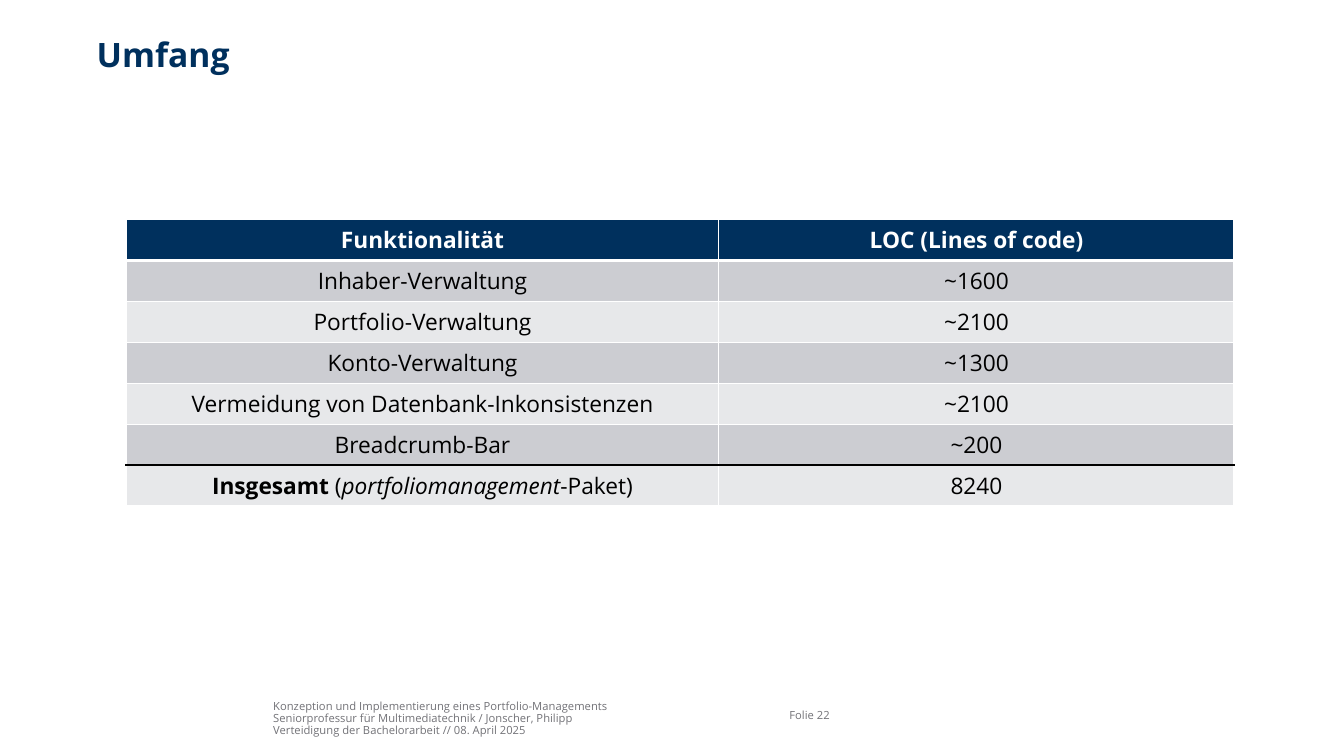
"""Builds the slide "Umfang": a table of code size by feature, with title and footer."""
from lxml.etree import SubElement as Sub
from pptx import Presentation
from pptx.dml.color import RGBColor
from pptx.enum.text import MSO_ANCHOR as Anchor, PP_ALIGN as Align
from pptx.oxml.ns import qn
from pptx.util import Inches, Pt

NAVY, WHITE, BLACK, GRAY = "00305D", "FFFFFF", "000000", "727277"
BANDS = ["CCCDD2", "E7E8EA"]


def color(code):
    return RGBColor.from_string(code)


def write(frame, text, size=16.2, ink=BLACK, bold=False, align=Align.LEFT, space=1.0):
    """Fill a frame; text is a string with line ends, or a list of (text, bold, italic)."""
    lines = [[(line, bold, False)] for line in text.split("\n")] if isinstance(text, str) else [text]
    for i, line in enumerate(lines):
        para = frame.paragraphs[0] if i == 0 else frame.add_paragraph()
        para.alignment, para.line_spacing = align, space
        for words, heavy, slant in line:
            run = para.add_run()
            run.text = words
            font = run.font
            font.name, font.size = "Open Sans", Pt(size)
            font.bold, font.italic = heavy, slant
            font.color.rgb = color(ink)


deck = Presentation()
deck.slide_width, deck.slide_height = Inches(13.33), Inches(7.5)
slide = deck.slides.add_slide(deck.slide_layouts[6])

foot = """Konzeption und Implementierung eines Portfolio-Managements
Seniorprofessur für Multimediatechnik / Jonscher, Philipp
Verteidigung der Bachelorarbeit // 08. April 2025"""
small = dict(size=8, ink=GRAY, space=0.9)
texts = [
    ((0.96, 0.38, 11.57, 0.75), "Umfang", Anchor.TOP, dict(size=24, ink=NAVY, bold=True, space=0.9)),
    ((2.71, 6.91, 4.9, 0.4), foot, Anchor.BOTTOM, small),
    ((7.83, 6.9, 0.77, 0.4), "Folie 22", Anchor.MIDDLE, small),
]
for place, text, anchor, style in texts:
    frame = slide.shapes.add_textbox(*map(Inches, place)).text_frame
    frame.margin_left = frame.margin_right = frame.margin_top = frame.margin_bottom = 0
    frame.word_wrap, frame.vertical_anchor = True, anchor
    write(frame, text, **style)

total = [("Insgesamt ", True, False), ("(", False, False),
         ("portfoliomanagement", False, True), ("-Paket)", False, False)]
rows = [
    ("Funktionalität", "LOC (Lines of code)"),
    ("Inhaber-Verwaltung", "~1600"),
    ("Portfolio-Verwaltung", "~2100"),
    ("Konto-Verwaltung", "~1300"),
    ("Vermeidung von Datenbank-Inkonsistenzen", "~2100"),
    ("Breadcrumb-Bar", "~200"),
    (total, "8240"),
]
last = len(rows) - 1
rules = {1: (WHITE, 3), last: (BLACK, 1)}
plain = (WHITE, 1)
area = map(Inches, (1.25, 2.18, 10.99, 2.84))
table = slide.shapes.add_table(len(rows), 2, *area).table
for col, width in zip(table.columns, (5.88, 5.11)):
    col.width = Inches(width)

for r, row in enumerate(rows):
    head = r == 0
    for c, text in enumerate(row):
        cell = table.cell(r, c)
        edges = dict(lnL=plain, lnR=plain, lnT=rules.get(r, plain), lnB=rules.get(r + 1, plain))
        props = cell._tc.get_or_add_tcPr()
        for tag, (ink, width) in edges.items():
            line = Sub(props, qn(f"a:{tag}"), w=str(Pt(width)))
            Sub(Sub(line, qn("a:solidFill")), qn("a:srgbClr"), val=ink)
        cell.fill.solid()
        cell.fill.fore_color.rgb = color(NAVY if head else BANDS[(r - 1) % 2])
        write(cell.text_frame, text, ink=WHITE if head else BLACK, bold=head, align=Align.CENTER)

deck.save("out.pptx")
